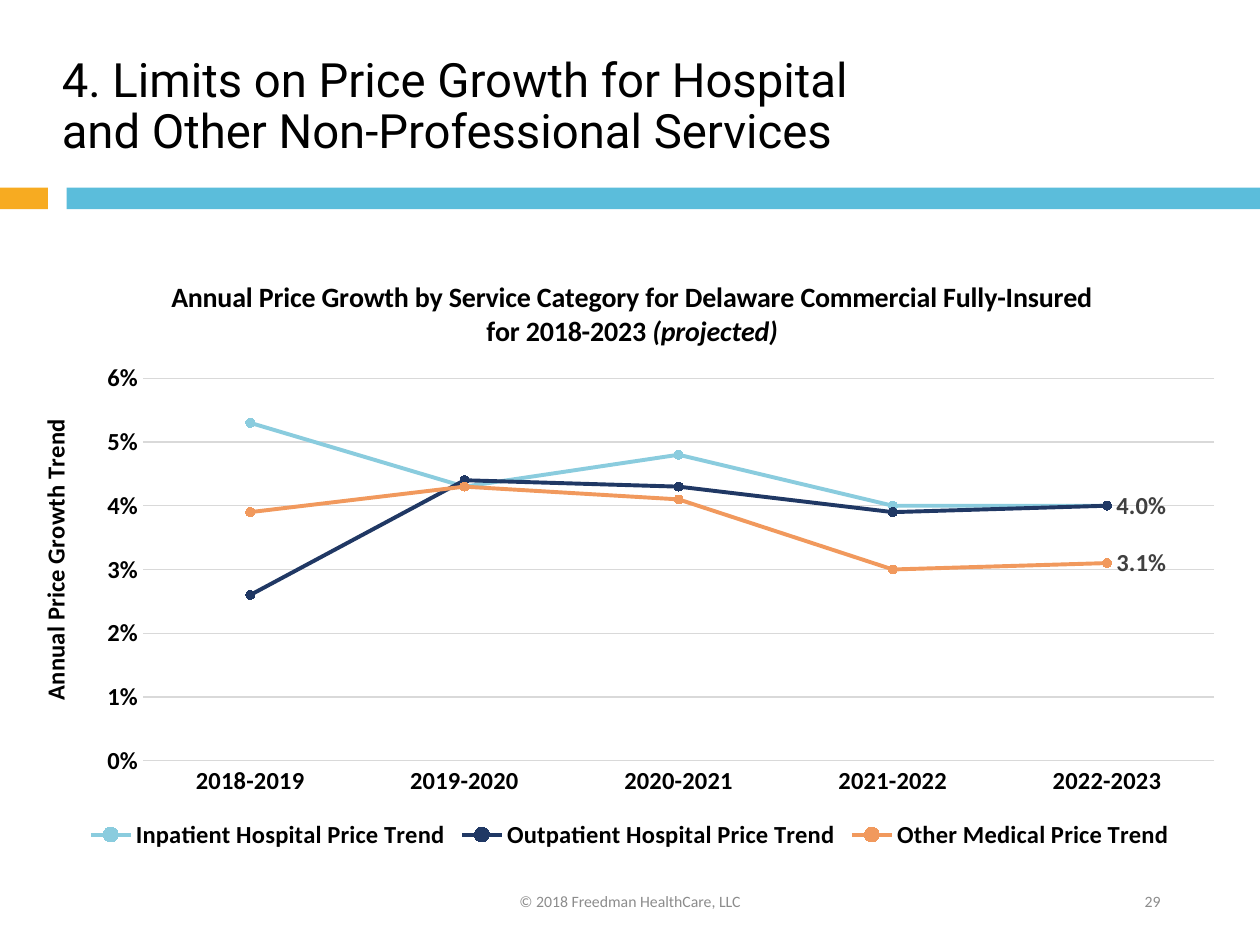
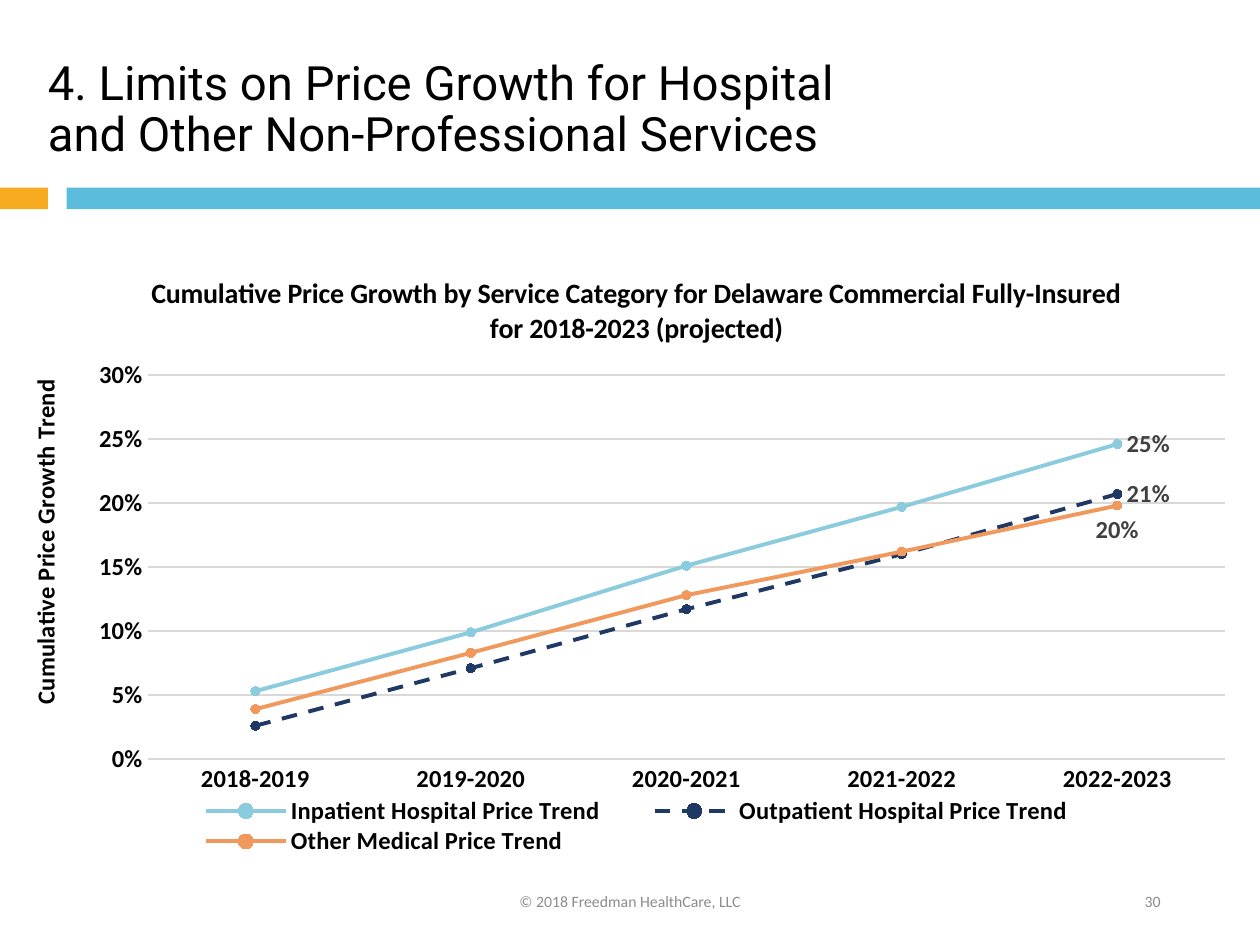
"""Build two slides on annual and cumulative hospital price growth."""
import lxml.etree
import pptx
import pptx.chart.data
import pptx.dml.color
import pptx.enum.chart
import pptx.enum.dml
import pptx.enum.shapes
import pptx.enum.text
import pptx.oxml.ns
import pptx.util

Inches = pptx.util.Inches
Pt = pptx.util.Pt
RGBColor = pptx.dml.color.RGBColor
ALIGN = pptx.enum.text.PP_ALIGN
POSITION = pptx.enum.chart.XL_LABEL_POSITION
NO_TICKS = pptx.enum.chart.XL_TICK_MARK.NONE
SOLID = pptx.enum.dml.MSO_LINE.SOLID
DASH = pptx.enum.dml.MSO_LINE.DASH

BLACK = RGBColor(0x00, 0x00, 0x00)
ORANGE = RGBColor(0xF7, 0xAB, 0x21)
BLUE = RGBColor(0x5B, 0xBD, 0xDB)
FOOTER_GRAY = RGBColor(0x8C, 0x8C, 0x8C)
GRID_GRAY = RGBColor(0xD9, 0xD9, 0xD9)
LABEL_GRAY = RGBColor(0x40, 0x40, 0x40)
INPATIENT = RGBColor(0x8A, 0xCC, 0xDE)
OUTPATIENT = RGBColor(0x20, 0x38, 0x64)
OTHER = RGBColor(0xF1, 0x99, 0x5D)

TITLE = "4. Limits on Price Growth for Hospital and Other Non-Professional Services"
FOOTER = "© 2018 Freedman HealthCare, LLC"
PERIODS = ["2018-2019", "2019-2020", "2020-2021", "2021-2022", "2022-2023"]
SERIES = [
    ("Inpatient Hospital Price Trend", INPATIENT),
    ("Outpatient Hospital Price Trend", OUTPATIENT),
    ("Other Medical Price Trend", OTHER),
]
BANDS = [(0, 0.38, ORANGE), (0.53, 9.47, BLUE)]

SLIDES = [
    {
        "number": "29",
        "title_at": (0.42, 0.38),
        "chart_at": (0.17, 1.99, 9.66, 4.82),
        "heading": "Annual Price Growth by Service Category for Delaware Commercial Fully-Insured",
        "projected_italic": True,
        "axis_title": "Annual Price Growth Trend",
        "value_format": "0.0%",
        "maximum": 0.06,
        "step": 0.01,
        "values": [
            (0.053, 0.043, 0.048, 0.04, 0.04),
            (0.026, 0.044, 0.043, 0.039, 0.04),
            (0.039, 0.043, 0.041, 0.03, 0.031),
        ],
        "label_positions": [None, POSITION.RIGHT, POSITION.RIGHT],
        "dashes": [SOLID, SOLID, SOLID],
        "heading_layout": (0.12, 0.04),
        "axis_layout": (0.01, 0.27),
        "plot_layout": (0.1, 0.21, 0.88, 0.63),
        "legend_layout": (0.05, 0.94, 0.9, 0.06),
    },
    {
        "number": "30",
        "title_at": (0.31, 0.4),
        "chart_at": (0.09, 1.96, 9.83, 4.84),
        "heading": "Cumulative Price Growth by Service Category for Delaware Commercial Fully-Insured",
        "projected_italic": False,
        "axis_title": "Cumulative Price Growth Trend",
        "value_format": "0%",
        "maximum": 0.3,
        "step": 0.05,
        "values": [
            (0.053, 0.099, 0.151, 0.197, 0.246),
            (0.026, 0.071, 0.117, 0.16, 0.207),
            (0.039, 0.083, 0.128, 0.162, 0.198),
        ],
        "label_positions": [POSITION.RIGHT, POSITION.RIGHT, POSITION.BELOW],
        "dashes": [SOLID, DASH, SOLID],
        "heading_layout": (0.11, 0.04),
        "axis_layout": (0.01, 0.21),
        "plot_layout": (0.11, 0.21, 0.87, 0.63),
        "legend_layout": (0.12, 0.9, 0.77, 0.1),
    },
]


def add_text(slide, text, box, size, font_name, color, alignment):
    """Add a vertically centred text box with one paragraph."""
    shape = slide.shapes.add_textbox(*[Inches(length) for length in box])
    frame = shape.text_frame
    frame.word_wrap = True
    frame.vertical_anchor = pptx.enum.text.MSO_ANCHOR.MIDDLE
    frame.text = text
    paragraph = frame.paragraphs[0]
    paragraph.alignment = alignment
    font = paragraph.runs[0].font
    font.size = Pt(size)
    font.name = font_name
    font.color.rgb = color
    return shape


def place(element, index, fractions, target=None):
    """Give a chart part a fixed place in fractions of the chart."""
    tag = pptx.oxml.ns.qn
    for previous in element.findall(tag("c:layout")):
        element.remove(previous)
    layout = lxml.etree.Element(tag("c:layout"))
    manual = lxml.etree.SubElement(layout, tag("c:manualLayout"))
    settings = [("layoutTarget", target)] if target else []
    settings += [("xMode", "edge"), ("yMode", "edge")]
    settings += list(zip("xywh", fractions))
    for name, value in settings:
        lxml.etree.SubElement(manual, tag("c:" + name)).set("val", str(value))
    element.insert(index, layout)


presentation = pptx.Presentation()
presentation.slide_width = Inches(10)
presentation.slide_height = Inches(7.5)

for content in SLIDES:
    slide = presentation.slides.add_slide(presentation.slide_layouts[6])

    for left, width, color in BANDS:
        band = slide.shapes.add_shape(
            pptx.enum.shapes.MSO_SHAPE.RECTANGLE,
            Inches(left), Inches(1.49), Inches(width), Inches(0.17))
        band.shadow.inherit = False
        band.fill.solid()
        band.fill.fore_color.rgb = color
        band.line.fill.background()

    add_text(slide, FOOTER, (3.31, 6.95, 3.38, 0.4), 9, "Calibri", FOOTER_GRAY, ALIGN.CENTER)
    add_text(slide, content["number"], (7.06, 6.95, 2.25, 0.4), 9, "Calibri", FOOTER_GRAY, ALIGN.RIGHT)

    title = add_text(slide, TITLE, (*content["title_at"], 6.92, 0.95), 27, "Roboto", BLACK, ALIGN.LEFT)
    frame = title.text_frame
    frame.margin_left = frame.margin_right = Inches(0.07)
    frame.margin_top = frame.margin_bottom = Inches(0.04)
    frame.paragraphs[0].line_spacing = 0.9

    chart_data = pptx.chart.data.CategoryChartData(number_format=content["value_format"])
    chart_data.categories = PERIODS
    for (name, color), values in zip(SERIES, content["values"]):
        chart_data.add_series(name, values)
    chart = slide.shapes.add_chart(
        pptx.enum.chart.XL_CHART_TYPE.LINE_MARKERS,
        *[Inches(length) for length in content["chart_at"]], chart_data).chart
    chart.font.size = Pt(10)
    chart.font.name = "Calibri"
    chart.font.color.rgb = BLACK

    heading = chart.chart_title.text_frame
    heading.text = content["heading"]
    second_line = heading.add_paragraph()
    second_line.text = "for 2018-2023 "
    second_line.add_run().text = "(projected)"
    second_line.runs[1].font.italic = content["projected_italic"]

    category_axis = chart.category_axis
    value_axis = chart.value_axis
    value_axis.axis_title.text_frame.text = content["axis_title"]
    value_axis.minimum_scale = 0
    value_axis.maximum_scale = content["maximum"]
    value_axis.major_unit = content["step"]
    value_axis.tick_labels.number_format = "0%"
    value_axis.tick_labels.number_format_is_linked = False
    value_axis.format.line.fill.background()
    for line in (category_axis.format.line, value_axis.major_gridlines.format.line):
        line.color.rgb = GRID_GRAY
        line.width = Pt(0.75)

    chart.has_legend = True
    legend = chart.legend
    legend.position = pptx.enum.chart.XL_LEGEND_POSITION.BOTTOM
    legend.include_in_layout = False

    bold_fonts = [(legend.font, 14)]
    for axis in (category_axis, value_axis):
        axis.major_tick_mark = axis.minor_tick_mark = NO_TICKS
        bold_fonts.append((axis.tick_labels.font, 14))
    for text_frame, size in ((heading, 16), (value_axis.axis_title.text_frame, 14)):
        for paragraph in text_frame.paragraphs:
            bold_fonts += [(run.font, size) for run in paragraph.runs]
    for font, size in bold_fonts:
        font.size = Pt(size)
        font.bold = True
        font.name = "Calibri"
        font.color.rgb = BLACK

    plot = chart.plots[0]
    plot.vary_by_categories = False
    for series, (name, color), dash, position in zip(
            plot.series, SERIES, content["dashes"], content["label_positions"]):
        series.smooth = False
        series.format.line.color.rgb = color
        series.format.line.width = Pt(2.25)
        series.format.line.dash_style = dash
        marker = series.marker
        marker.style = pptx.enum.chart.XL_MARKER_STYLE.CIRCLE
        marker.size = 5
        marker.format.fill.solid()
        marker.format.fill.fore_color.rgb = color
        marker.format.line.color.rgb = color
        if position is not None:
            series.data_labels.show_value = False
            label = series.points[len(PERIODS) - 1].data_label
            label.font.size = Pt(14)
            label.font.bold = True
            label.font.name = "Calibri"
            label.font.color.rgb = LABEL_GRAY
            label.position = position

    plot_area = chart.element.find(".//" + pptx.oxml.ns.qn("c:plotArea"))
    axis_title = plot_area.find(".//" + pptx.oxml.ns.qn("c:title"))
    place(plot_area, 0, content["plot_layout"], "inner")
    place(axis_title, 1, content["axis_layout"])
    place(chart.element.find(".//" + pptx.oxml.ns.qn("c:title")), 1, content["heading_layout"])
    place(chart.element.find(".//" + pptx.oxml.ns.qn("c:legend")), 1, content["legend_layout"])

presentation.save("out.pptx")
